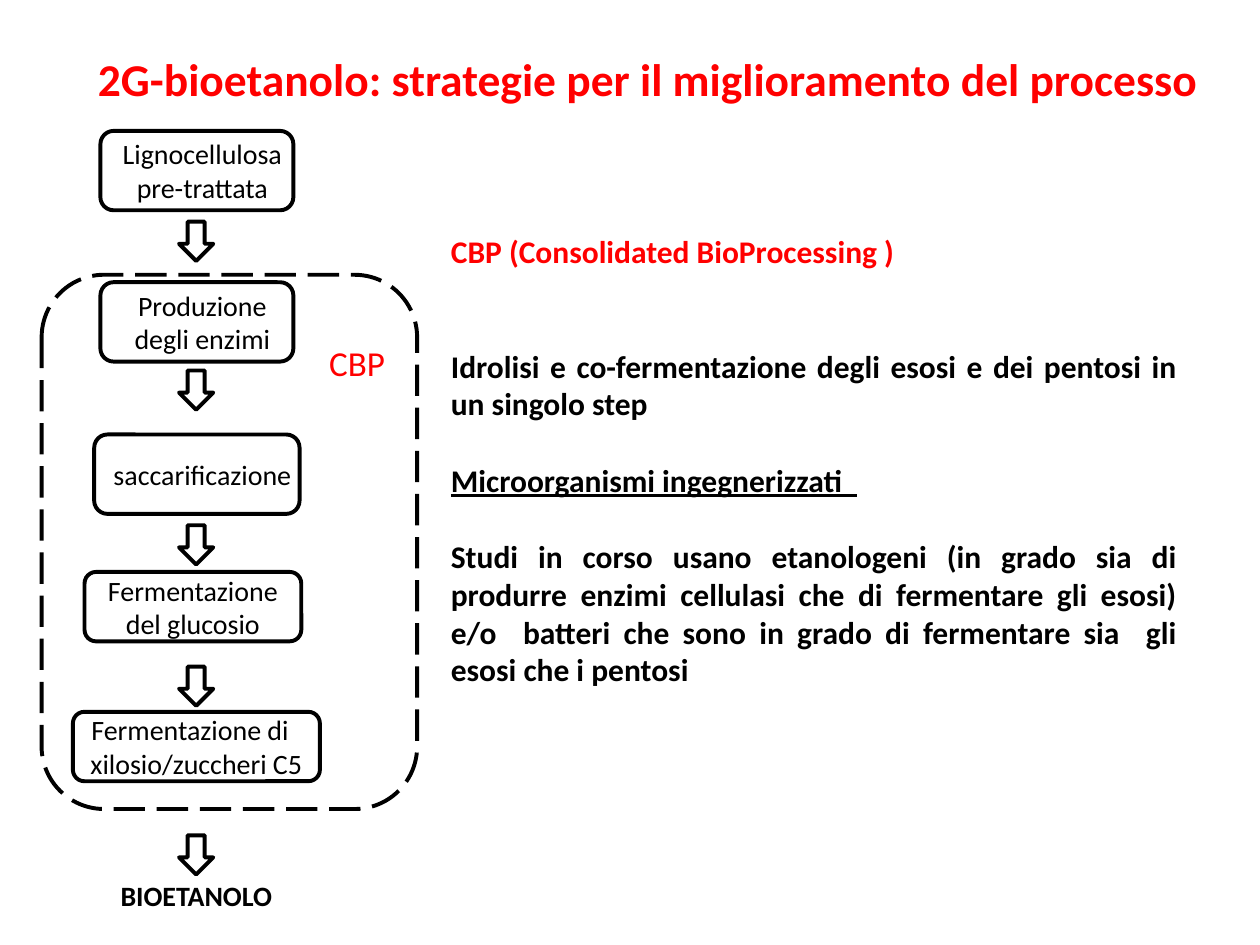
from pptx import Presentation
from pptx import util as u
from pptx.dml.color import RGBColor
from pptx.enum import dml, shapes, text

COLORS = {"red": "FF0000", "black": "000000", "white": "FFFFFF"}
FONT = "Calibri"
CENTER, JUSTIFY = text.PP_ALIGN.CENTER, text.PP_ALIGN.JUSTIFY
ROUNDED = shapes.MSO_SHAPE.ROUNDED_RECTANGLE
DOWN_ARROW = shapes.MSO_SHAPE.DOWN_ARROW
MIDDLE = text.MSO_ANCHOR.MIDDLE


def color(name):
    return RGBColor.from_string(COLORS[name])


def style(paragraph, size, name="black", bold=False, align=CENTER):
    paragraph.alignment = align
    paragraph.font.name = FONT
    paragraph.font.size = u.Pt(size)
    paragraph.font.bold = bold
    paragraph.font.color.rgb = color(name)


def write(shape, lines, size, anchor=text.MSO_ANCHOR.TOP, **look):
    frame = shape.text_frame
    frame.word_wrap = True
    frame.vertical_anchor = anchor
    frame.text = "\n".join(lines)
    for paragraph in frame.paragraphs:
        style(paragraph, size, **look)


def add_text(parent, box, lines, size, **look):
    label = parent.add_textbox(*map(u.Cm, box))
    write(label, lines, size, **look)
    return label


def add_outline(parent, kind, box, fill=None, line="black"):
    shape = parent.add_shape(kind, *map(u.Cm, box))
    shape.shadow.inherit = False
    if fill:
        shape.fill.solid()
        shape.fill.fore_color.rgb = color(fill)
    else:
        shape.fill.background()
    if line:
        shape.line.color.rgb = color(line)
        shape.line.width = u.Pt(2.25)
    else:
        shape.line.fill.background()
    return shape


def add_labelled_step(parent, box, lines):
    """Group a label with the rounded frame around it."""
    left, top, width, height = box
    group = parent.add_group_shape().shapes
    label = add_text(group, (left - 0.1, top + 0.1, width + 0.2, height - 0.2),
                     lines, 16, anchor=MIDDLE)
    frame = label.text_frame
    frame.margin_left = u.Cm(0.25)
    frame.margin_right = frame.margin_top = frame.margin_bottom = u.Cm(0.03)
    add_outline(group, ROUNDED, box)


def add_process(parent, left, top):
    """Flow chart of the process, relative to its top left corner."""
    # Dashed frame of the consolidated steps
    frame = add_outline(parent, ROUNDED, (left, top + 2.9, 7.57, 10.77))
    frame.line.dash_style = dml.MSO_LINE.LONG_DASH
    add_text(parent, (left + 5.41, top + 4.12, 1.9, 1.12), ["CBP"], 20, name="red")

    # Steps with a separate label: offset, width, lines
    for offset, width, lines in [
        (0, 3.89, ["Lignocellulosa", "pre-trattata"]),
        (3.05, 3.89, ["Produzione degli enzimi"]),
        (6.12, 4.14, ["saccarificazione"]),
    ]:
        add_labelled_step(parent, (left + 3.13 - width / 2, top + offset, width, 1.6), lines)

    # Fermentation steps and product: centre, offset, width, height, lines
    for centre, offset, width, height, lines, line in [
        (3.05, 8.89, 4.37, 1.4, ["Fermentazione del glucosio"], "black"),
        (3.12, 11.71, 4.98, 1.4, ["Fermentazione di  ", "xilosio/zuccheri C5"], "black"),
        (3.12, 14.81, 4.42, 1.19, ["BIOETANOLO"], None),
    ]:
        box = (left + centre - width / 2, top + offset, width, height)
        step = add_outline(parent, ROUNDED, box, line=line)
        write(step, lines, 16, anchor=MIDDLE, bold=line is None)

    # Arrows between the steps
    for offset in (1.83, 4.83, 7.95, 10.8, 14.2):
        add_outline(parent, DOWN_ARROW, (left + 2.77, top + offset, 0.69, 0.79), fill="white")


def add_description(parent, box):
    """Explanation of the strategy; gaps are whole lines of 22 pt."""
    content = [
        ("CBP (Consolidated BioProcessing ) ", "red", 0),
        ("Idrolisi e co-fermentazione degli esosi e dei pentosi in un singolo step", "black", 44),
        ("Microorganismi ingegnerizzati  ", "black", 22),
        ("Studi in corso usano etanologeni (in grado sia di produrre enzimi cellulasi "
         "che di fermentare gli esosi) e/o  batteri che sono in grado di fermentare sia  "
         "gli esosi che i pentosi", "black", 22),
    ]
    label = add_text(parent, box, [line for line, _, _ in content], 18, bold=True, align=JUSTIFY)
    paragraphs = label.text_frame.paragraphs
    for paragraph, (_, name, gap) in zip(paragraphs, content):
        paragraph.font.color.rgb = color(name)
        paragraph.space_before = u.Pt(gap)
    paragraphs[2].runs[0].font.underline = True


def main():
    presentation = Presentation()
    presentation.slide_width, presentation.slide_height = u.Cm(25.4), u.Cm(19.05)
    slide = presentation.slides.add_slide(presentation.slide_layouts[6])
    add_text(slide.shapes, (0.99, 0.91, 24.16, 1.37),
             [" 2G-bioetanolo: strategie per il miglioramento del processo "],
             26, name="red", bold=True)
    add_process(slide.shapes, 0.84, 2.64)
    add_description(slide.shapes, (8.84, 4.55, 15.14, 9.5))
    presentation.save("out.pptx")


if __name__ == "__main__":
    main()
